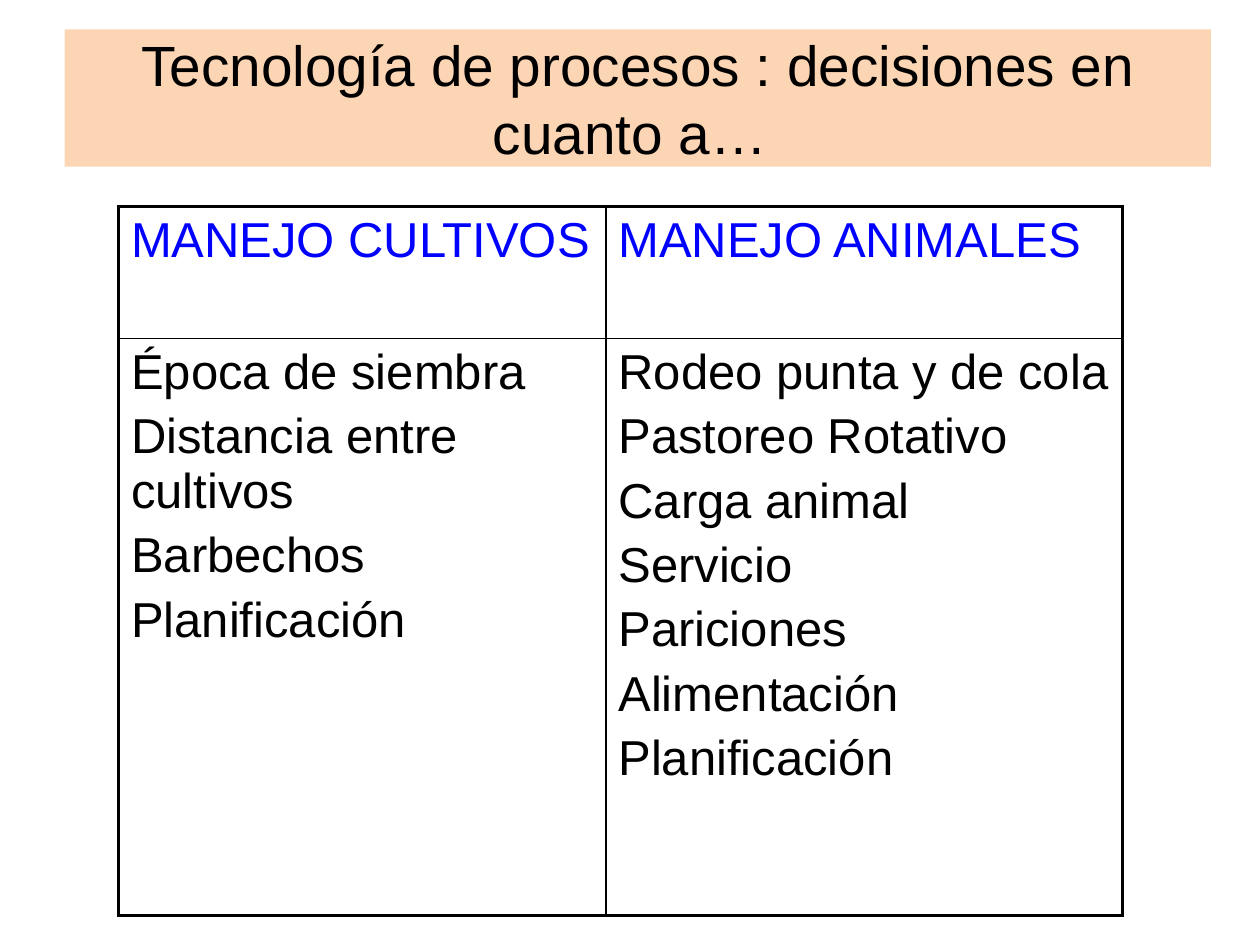
import pptx
import pptx.util
import pptx.dml.color
import pptx.enum.text
import pptx.oxml
import pptx.oxml.ns
from pptx.util import Pt

FONT = "Arial"
OUTER, INNER = 2.25, 1
COLUMNS = [
    ("MANEJO CULTIVOS",
     ["Época de siembra", "Distancia entre cultivos", "Barbechos", "Planificación"]),
    ("MANEJO ANIMALES",
     ["Rodeo punta y de cola", "Pastoreo Rotativo", "Carga animal", "Servicio",
      "Pariciones", "Alimentación", "Planificación"]),
]


def rgb(value):
    return pptx.dml.color.RGBColor.from_string(value)


def style_paragraph(p, size, color):
    p.font.name = FONT
    p.font.size = Pt(size)
    p.font.color.rgb = rgb(color)


def add_title(s, left, top, width, height):
    sp = s.shapes.title
    sp.left, sp.top, sp.width, sp.height = Pt(left), Pt(top), Pt(width), Pt(height)
    sp.fill.solid()
    sp.fill.fore_color.rgb = rgb("FCD5B5")
    tf = sp.text_frame
    tf.text = "Tecnología de procesos : decisiones en cuanto a… "
    tf.word_wrap = True
    tf.auto_size = pptx.enum.text.MSO_AUTO_SIZE.NONE
    tf.vertical_anchor = pptx.enum.text.MSO_ANCHOR.MIDDLE
    p = tf.paragraphs[0]
    p.alignment = pptx.enum.text.PP_ALIGN.CENTER
    style_paragraph(p, 32.4, "000000")


def set_borders(cell, widths):
    tc_pr = cell._tc.get_or_add_tcPr()
    for i, (side, width) in enumerate(widths.items()):
        line = pptx.oxml.parse_xml(
            f'<a:ln{side} {pptx.oxml.ns.nsdecls("a")} w="{Pt(width)}">'
            '<a:solidFill><a:srgbClr val="000000"/></a:solidFill>'
            f'</a:ln{side}>')
        tc_pr.insert(i, line)  # borders come before the fill


def fill_cell(cell, lines, color):
    cell.fill.background()
    tf = cell.text_frame
    tf.text = "\n".join(lines)
    for p in tf.paragraphs:
        p.space_before = Pt(5.6)
        style_paragraph(p, 28, color)


def add_decisions_table(s, left, top, width, height):
    table = s.shapes.add_table(2, 2, Pt(left), Pt(top), Pt(width), Pt(height)).table
    table.first_row = table.horz_banding = False

    # Column and row sizes
    first_width, header_height = 278.5, 75.5
    table.columns[0].width = Pt(first_width)
    table.columns[1].width = Pt(width - first_width)
    table.rows[0].height = Pt(header_height)
    table.rows[1].height = Pt(height - header_height)

    # Text, with a heavy frame around thin inner lines
    for col, (heading, items) in enumerate(COLUMNS):
        for row, (lines, color) in enumerate([([heading], "0000FF"), (items, "000000")]):
            cell = table.cell(row, col)
            fill_cell(cell, lines, color)
            set_borders(cell, {
                "L": OUTER if col == 0 else INNER,
                "R": OUTER if col == 1 else INNER,
                "T": OUTER if row == 0 else INNER,
                "B": OUTER if row == 1 else INNER,
            })


def main():
    prs = pptx.Presentation()
    prs.slide_width, prs.slide_height = Pt(720), Pt(540)
    s = prs.slides.add_slide(prs.slide_layouts[5])
    add_title(s, 37, 16.75, 655, 78.5)
    add_decisions_table(s, 67.75, 118, 573.75, 405)
    prs.save("out.pptx")


if __name__ == "__main__":
    main()
